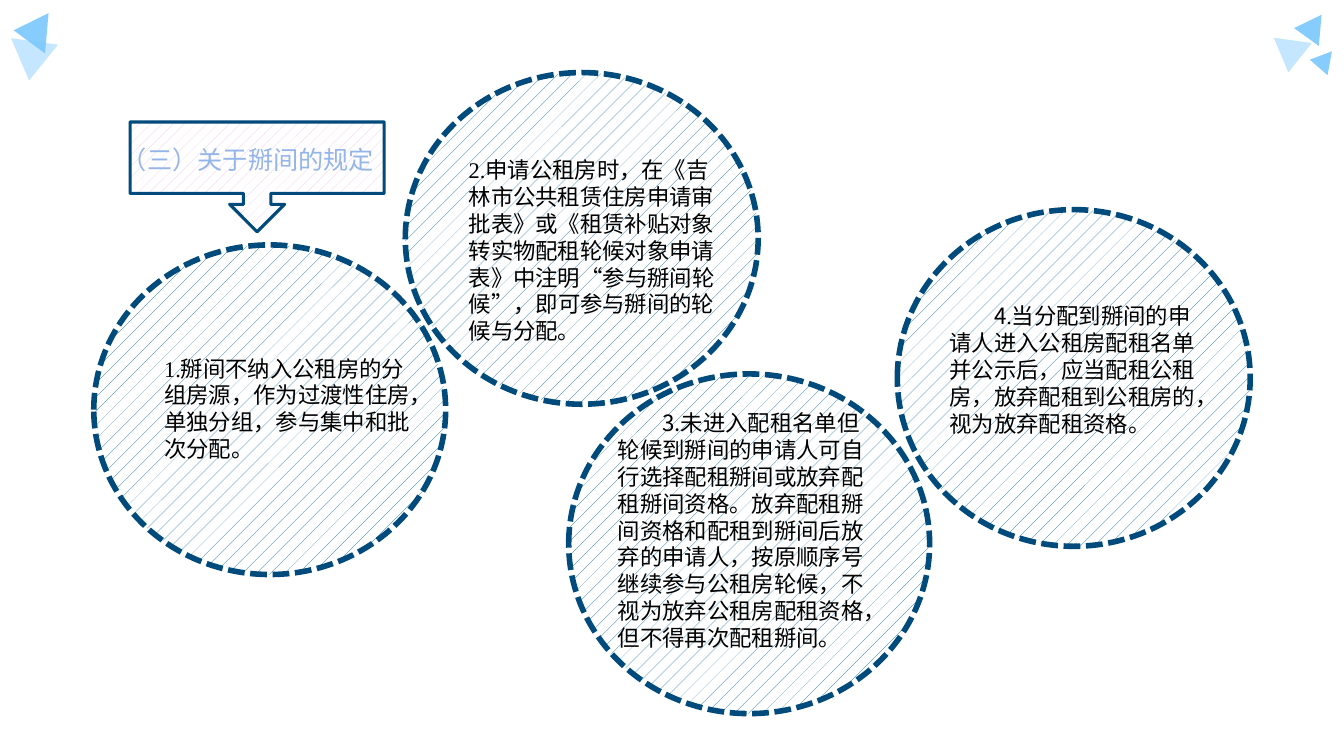
"""Build the slide on the rules for shared partition rooms."""
from lxml import etree
from pptx import Presentation
from pptx.dml.color import RGBColor
from pptx.enum.dml import MSO_LINE, MSO_PATTERN
from pptx.enum.shapes import MSO_SHAPE
from pptx.enum.text import MSO_ANCHOR, MSO_AUTO_SIZE, PP_ALIGN
from pptx.oxml.ns import qn
from pptx.util import Inches, Pt

TRIANGLE, OVAL = MSO_SHAPE.ISOSCELES_TRIANGLE, MSO_SHAPE.OVAL
CALLOUT = MSO_SHAPE.DOWN_ARROW_CALLOUT
DOTS, HATCH = MSO_PATTERN.PERCENT_5, MSO_PATTERN.PERCENT_10
DASH = MSO_LINE.SQUARE_DOT
TOP, LEFT = MSO_ANCHOR.TOP, PP_ALIGN.LEFT
FIT = MSO_AUTO_SIZE.SHAPE_TO_FIT_TEXT

SANS, SERIF = "Noto Sans CJK SC", "Times New Roman"
LINE_RATIO = 1.2
COLORS = {
    "triangle": "79C7FD", "navy": "014A7C", "dots": "0264A8", "pink": "F4C1ED",
    "white": "FFFFFF", "text": "000000", "heading": "94B5E8", "outline": "215099",
}

HEADING = "（三）关于掰间的规定"
HEADING_AREA = (1.11, 1.38, 2.7, 0.4)
CALLOUT_AREA = (1.29, 1.21, 2.52, 1.09)
TRIANGLES = [
    ((0.08, 0.41, 0.47, 0.39), 187.9, 44),
    ((0.1, 0.15, 0.4, 0.33), 275, 90),
    ((12.81, 0.16, 0.31, 0.26), 275, 90),
    ((12.61, 0.4, 0.38, 0.32), 187.9, 44),
    ((12.97, 0.51, 0.24, 0.2), 280.2, 90),
]
RULES = [
    {"circle": (0.93, 2.43, 3.49, 3.27), "area": (1.53, 3.47, 2.7, 1.18), "indent": 0,
     "spans": [("1.", SERIF),
               ("掰间不纳入公租房的分组房源，作为过渡性住房，单独分组，参与集中和批次分配。", SANS)]},
    {"circle": (4.02, 0.72, 3.5, 3.29), "area": (4.55, 1.5, 2.69, 1.98), "indent": 0,
     "spans": [("2.", SERIF),
               ("申请公租房时，在《吉林市公共租赁住房申请审批表》或《租赁补贴对象"
                "转实物配租轮候对象申请表》中注明", SANS),
               ("“", SERIF), ("参与掰间轮候", SANS), ("”", SERIF),
               ("，即可参与掰间的轮候与分配。", SANS)]},
    {"circle": (5.64, 3.71, 3.58, 3.37), "area": (6.03, 4.01, 2.81, 2.52), "indent": 0.44,
     "spans": [("3.未进入配租名单但轮候到掰间的申请人可自行选择配租掰间或放弃配租掰间资格。"
                "放弃配租掰间资格和配租到掰间后放弃的申请人，按原顺序号继续参与公租房轮候，"
                "不视为放弃公租房配租资格，但不得再次配租掰间。", SANS)]},
    {"circle": (8.9, 2.08, 3.5, 3.34), "area": (9.32, 2.95, 2.75, 1.45), "indent": 0.44,
     "spans": [("4", SANS), (".", SERIF),
               ("当分配到掰间的申请人进入公租房配租名单并公示后，应当配租公租房，"
                "放弃配租到公租房的，视为放弃配租资格。", SANS)]},
]


def color(name):
    return RGBColor.from_string(COLORS[name])


def lengths(area):
    return [Inches(value) for value in area]


def add_triangle(page, area, rotation, opacity):
    triangle = page.shapes.add_shape(TRIANGLE, *lengths(area))
    triangle.shadow.inherit = False
    triangle.rotation = rotation
    triangle.line.fill.background()
    triangle.fill.solid()
    triangle.fill.fore_color.rgb = color("triangle")
    tint = triangle.fill._xPr.find(".//" + qn("a:srgbClr"))
    etree.SubElement(tint, qn("a:alpha"), val=str(opacity * 1000))


def add_patterned(page, kind, area, pattern, ink, width):
    shape = page.shapes.add_shape(kind, *lengths(area))
    shape.shadow.inherit = False
    shape.fill.patterned()
    shape.fill.pattern = pattern
    shape.fill.fore_color.rgb = color(ink)
    shape.fill.back_color.rgb = color("white")
    shape.line.color.rgb = color("navy")
    shape.line.width = Pt(width)
    return shape


def write(box, spans, size, ink, indent=0):
    frame = box.text_frame
    frame.word_wrap = True
    frame.auto_size = FIT
    frame.vertical_anchor = TOP
    para = frame.paragraphs[0]
    para.alignment = LEFT
    para.line_spacing = Pt(size * LINE_RATIO)
    para.font.size = Pt(size)
    para.font.color.rgb = color(ink)
    if indent:
        para._p.get_or_add_pPr().set("indent", str(Inches(indent)))
    for text, font in spans:
        span = para.add_run()
        span.text = text
        span.font.size = Pt(size)
        span.font.color.rgb = color(ink)
        span.font.name = font
        etree.SubElement(span._r.rPr, qn("a:ea"), typeface=SANS)
    return para


def add_heading(page):
    title = page.shapes.title
    title.left, title.top, title.width, title.height = lengths(HEADING_AREA)
    title.text_frame.margin_right = 0
    para = write(title, [(HEADING, SANS)], 18, "heading")
    outline = etree.Element(qn("a:ln"), w=str(Pt(1.75)))
    fill = etree.SubElement(outline, qn("a:solidFill"))
    etree.SubElement(fill, qn("a:srgbClr"), val=COLORS["outline"])
    para.runs[0]._r.rPr.insert(0, outline)
    page.shapes._spTree.append(title._element)


def main():
    deck = Presentation()
    deck.slide_width, deck.slide_height = Inches(13.33), Inches(7.5)
    page = deck.slides.add_slide(deck.slide_layouts[5])
    for area, rotation, opacity in TRIANGLES:
        add_triangle(page, area, rotation, opacity)
    for rule in RULES:
        circle = add_patterned(page, OVAL, rule["circle"], DOTS, "dots", 4)
        circle.line.dash_style = DASH
    for rule in RULES:
        box = page.shapes.add_textbox(*lengths(rule["area"]))
        write(box, rule["spans"], 16, "text", indent=rule["indent"])
    add_patterned(page, CALLOUT, CALLOUT_AREA, HATCH, "pink", 2.25)
    add_heading(page)
    deck.save("out.pptx")


if __name__ == "__main__":
    main()
